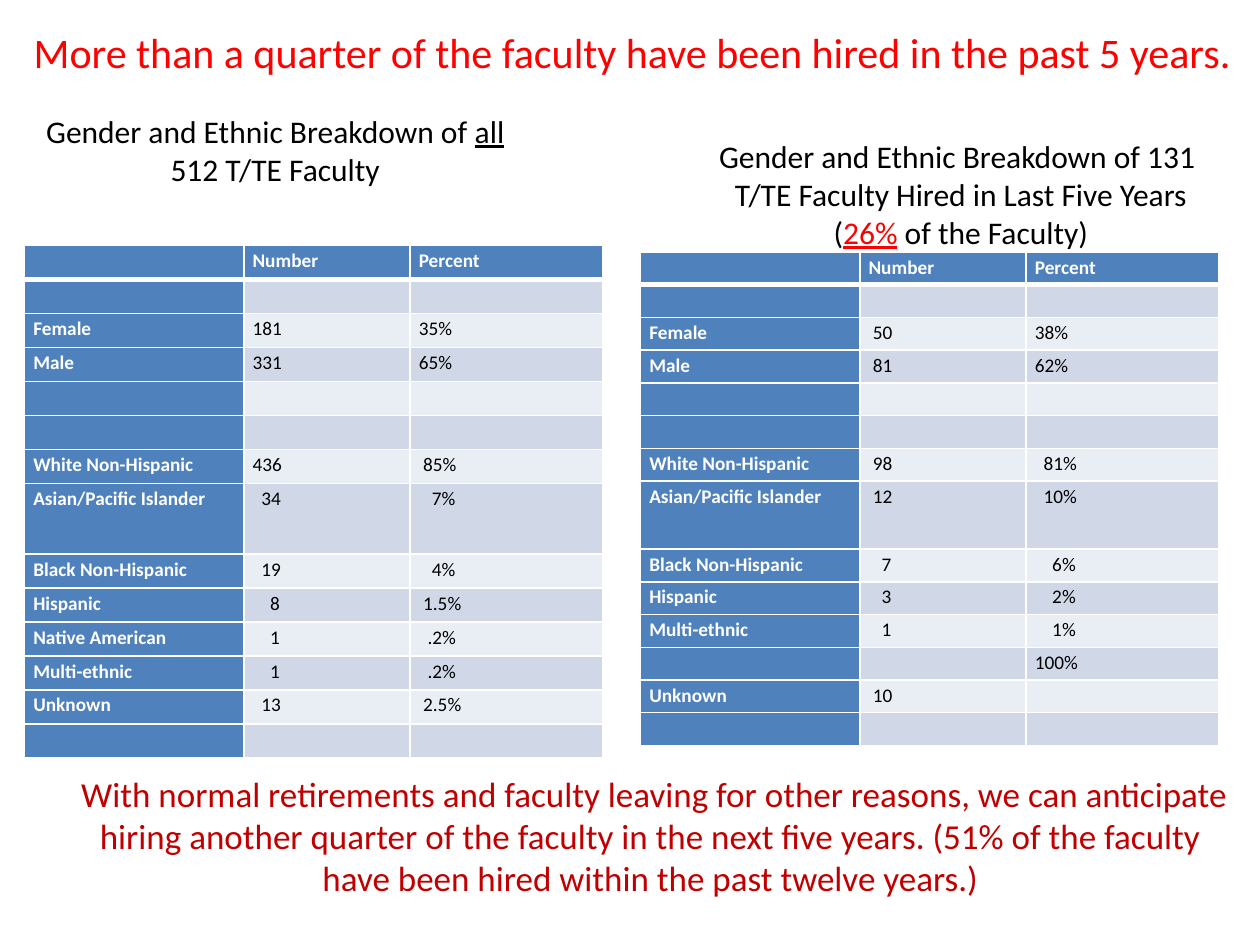
from lxml.etree import SubElement
from pptx import Presentation
from pptx.dml.color import RGBColor
from pptx.enum.text import MSO_AUTO_SIZE, PP_ALIGN
from pptx.oxml.ns import qn
from pptx.util import Pt

FONT = "Calibri"
BLACK = RGBColor(0x00, 0x00, 0x00)
WHITE = RGBColor(0xFF, 0xFF, 0xFF)
RED = RGBColor(0xFF, 0x00, 0x00)
DARK_RED = RGBColor(0xC0, 0x00, 0x00)
BLUE = RGBColor(0x4F, 0x81, 0xBD)
BANDS = (RGBColor(0xD0, 0xD8, 0xE8), RGBColor(0xE9, 0xED, 0xF4))

COLUMN_WIDTHS = (125.3, 95, 110.2)
CELL_SIZE = 11
CELL_INSET = 5.04
SPACE_WIDTH = 2.49
TALL_ROW = 7

HEADER = ("", "Number", 0, "Percent", 0)
BLANK = ("", "", 0, "", 0)

ALL_FACULTY = (
    HEADER,
    BLANK,
    ("Female", "181", 0, "35%", 0),
    ("Male", "331", 0, "65%", 0),
    BLANK,
    BLANK,
    ("White Non-Hispanic", "436", 0, "85%", 1),
    ("Asian/Pacific Islander", "34", 2, "7%", 3),
    ("Black Non-Hispanic", "19", 2, "4%", 3),
    ("Hispanic", "8", 4, "1.5%", 1),
    ("Native American", "1", 4, ".2%", 2),
    ("Multi-ethnic", "1", 4, ".2%", 2),
    ("Unknown", "13", 2, "2.5%", 1),
    BLANK,
)

RECENT_HIRES = (
    HEADER,
    BLANK,
    ("Female", "50", 1, "38%", 0),
    ("Male", "81", 1, "62%", 0),
    BLANK,
    BLANK,
    ("White Non-Hispanic", "98", 1, "81%", 2),
    ("Asian/Pacific Islander", "12", 1, "10%", 2),
    ("Black Non-Hispanic", "7", 3, "6%", 4),
    ("Hispanic", "3", 3, "2%", 4),
    ("Multi-ethnic", "1", 3, "1%", 4),
    ("", "", 0, "100%", 0),
    ("Unknown", "10", 1, "", 0),
    BLANK,
)


def format_run(r, size, color, bold=False):
    r.font.name = FONT
    r.font.size = Pt(size)
    r.font.color.rgb = color
    r.font.bold = bold


def add_text(s, box, lines, size, color, align=PP_ALIGN.CENTER):
    sp = s.shapes.add_textbox(*(Pt(v) for v in box))
    tf = sp.text_frame
    tf.word_wrap = False
    tf.auto_size = MSO_AUTO_SIZE.SHAPE_TO_FIT_TEXT
    for i, line in enumerate(lines):
        p = tf.paragraphs[0] if i == 0 else tf.add_paragraph()
        p.alignment = align
        for text, run_color, underline in line:
            r = p.add_run()
            r.text = text
            format_run(r, size, run_color or color)
            r.font.underline = underline


def plain(text):
    return [(text, None, False)]


def set_borders(cell, row):
    tcPr = cell._tc.get_or_add_tcPr()
    widths = {
        "a:lnL": 1,
        "a:lnR": 1,
        "a:lnT": 3 if row == 1 else 1,
        "a:lnB": 3 if row == 0 else 1,
    }
    for tag, width in widths.items():
        ln = SubElement(tcPr, qn(tag), w=str(Pt(width)))
        fill = SubElement(ln, qn("a:solidFill"))
        SubElement(fill, qn("a:srgbClr"), val=str(WHITE))


def fill_cell(cell, row, col, text, indent):
    is_heading = row == 0 or col == 0
    set_borders(cell, row)
    cell.fill.solid()
    cell.fill.fore_color.rgb = BLUE if is_heading else BANDS[(row - 1) % 2]
    cell.margin_left = Pt(CELL_INSET + indent * SPACE_WIDTH)
    cell.margin_right = Pt(CELL_INSET)
    cell.margin_top = cell.margin_bottom = Pt(0)
    p = cell.text_frame.paragraphs[0]
    p.line_spacing = 1.15
    if text:
        p.text = text
        format_run(p.runs[0], CELL_SIZE, WHITE if is_heading else BLACK, is_heading)
    else:
        SubElement(p._p, qn("a:endParaRPr"), sz=str(CELL_SIZE * 100))


def add_breakdown(s, left, top, row_height, tall_height, rows):
    heights = [row_height] * len(rows)
    heights[TALL_ROW] = tall_height
    frame = s.shapes.add_table(
        len(rows), len(COLUMN_WIDTHS), Pt(left), Pt(top),
        Pt(sum(COLUMN_WIDTHS)), Pt(sum(heights)),
    )
    table = frame.table
    for column, width in zip(table.columns, COLUMN_WIDTHS):
        column.width = Pt(width)
    for i, (label, number, number_indent, percent, percent_indent) in enumerate(rows):
        table.rows[i].height = Pt(heights[i])
        fill_cell(table.cell(i, 0), i, 0, label, 0)
        fill_cell(table.cell(i, 1), i, 1, number, number_indent)
        fill_cell(table.cell(i, 2), i, 2, percent, percent_indent)


def main():
    prs = Presentation()
    prs.slide_width = Pt(720)
    prs.slide_height = Pt(540)
    s = prs.slides.add_slide(prs.slide_layouts[6])

    add_text(s, (12.2, 60.5, 290.2, 51), [
        [("Gender and Ethnic Breakdown of ", None, False), ("all", None, True)],
        plain("512 T/TE Faculty"),
    ], 18, BLACK)
    add_text(s, (401.8, 75, 294.5, 72.7), [
        plain("Gender and Ethnic Breakdown of 131 "),
        plain("T/TE Faculty Hired in Last Five Years"),
        [("(", None, False), ("26%", RED, True), (" of the Faculty)", None, False)],
    ], 18, BLACK)
    add_text(s, (36, 437.8, 676, 80), [
        plain("With normal retirements and faculty leaving for other reasons, we can anticipate"),
        plain("hiring another quarter of the faculty in the next five years. (51% of the faculty "),
        plain("have been hired within the past twelve years.) "),
    ], 20, DARK_RED)

    add_breakdown(s, 14, 140.4, 19.43, 40.3, ALL_FACULTY)
    add_breakdown(s, 366, 144, 18.72, 38.8, RECENT_HIRES)

    add_text(s, (12.2, 11.5, 705.6, 36), [
        plain("More than a quarter of the faculty have been hired in the past 5 years."),
    ], 24, RED, PP_ALIGN.LEFT)

    prs.save("out.pptx")


if __name__ == "__main__":
    main()
